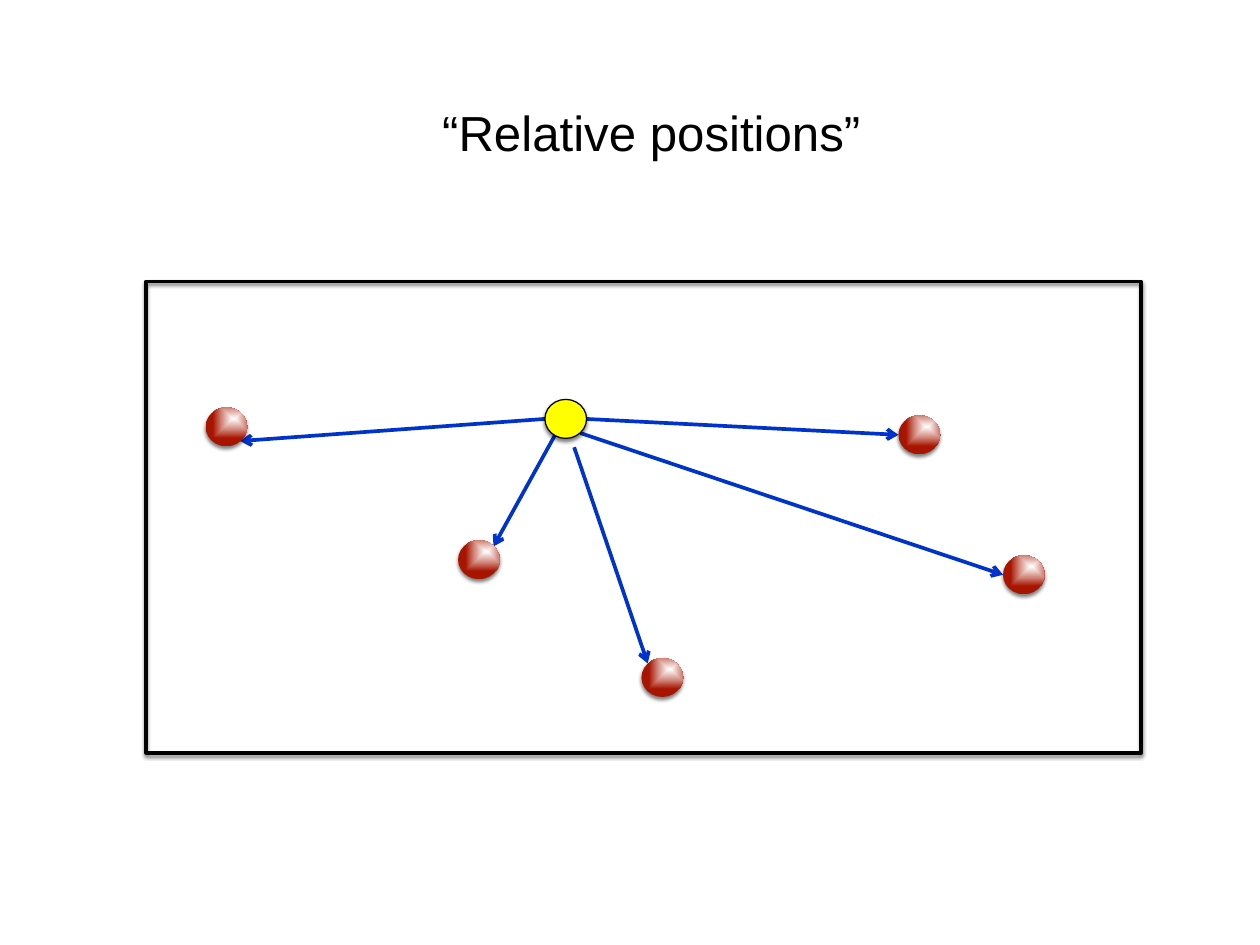
import pptx
import pptx.dml.color
import pptx.enum.shapes
import pptx.enum.text
import pptx.oxml
import pptx.oxml.ns
import pptx.util

RGB = pptx.dml.color.RGBColor
SHAPE = pptx.enum.shapes.MSO_SHAPE
BLACK = RGB(0x00, 0x00, 0x00)
BLUE = RGB(0x00, 0x33, 0xCC)
YELLOW = RGB(0xFF, 0xFF, 0x00)
STOPS = [
    (0, RGB(0xFF, 0xFF, 0xFF)),
    (54, RGB(0xD3, 0x8A, 0x80)),
    (100, RGB(0xA7, 0x15, 0x00)),
]

SCALE = 9144  # EMU in a px, 100 px to the inch
BALL = (47, 44)
HUB = (615, 451)
# left and top of each ball, then start and end of its arrow
BALLS = [
    ((232, 460), (615, 473), (271, 498)),
    ((1132, 627), (655, 489), (1132, 649)),
    ((1014, 469), (661, 473), (1014, 491)),
    ((517, 610), (626, 492), (557, 617)),
    ((724, 743), (648, 505), (731, 749)),
]


def emu(*px):
    return [pptx.util.Emu(n * SCALE) for n in px]


def node(xml):
    """Parse one element, given without its a: namespace declaration."""
    space = pptx.oxml.ns.nsdecls("a")
    tag, rest = xml[:-2].split(" ", 1) if xml.endswith("/>") else (None, None)
    if tag:
        return pptx.oxml.parse_xml(f"{tag} {space} {rest}/>")
    end = xml.index(">")
    return pptx.oxml.parse_xml(f"{xml[:end]} {space}{xml[end:]}")


def add_shade(shape):
    """Give the shape a soft shadow straight below it."""
    shape.shadow.inherit = False
    blur, dist = pptx.util.Pt(3), pptx.util.Pt(2)
    effects = shape._element.spPr.find(pptx.oxml.ns.qn("a:effectLst"))
    effects.append(node(
        f'<a:outerShdw blurRad="{blur}" dist="{dist}" dir="5400000" rotWithShape="0">'
        f'<a:srgbClr val="{BLACK}"><a:alpha val="50000"/></a:srgbClr></a:outerShdw>'))


def add_form(slide, kind, box, fill=None, width=0):
    shape = slide.shapes.add_shape(kind, *emu(*box))
    if fill is None:
        shape.fill.background()
    else:
        shape.fill.solid()
        shape.fill.fore_color.rgb = fill
    if width:
        shape.line.color.rgb = BLACK
        shape.line.width = pptx.util.Pt(width)
    else:
        shape.line.fill.background()
    add_shade(shape)
    return shape


def add_ball(slide, place):
    """Add a red ball lit from its upper right."""
    ball = add_form(slide, SHAPE.OVAL, place + BALL)
    stops = "".join(
        f'<a:gs pos="{pos * 1000}"><a:srgbClr val="{color}"/></a:gs>'
        for pos, color in STOPS)
    props = ball._element.spPr
    blank = props.find(pptx.oxml.ns.qn("a:noFill"))
    props.replace(blank, node(
        f'<a:gradFill rotWithShape="1"><a:gsLst>{stops}</a:gsLst><a:path path="shape">'
        '<a:fillToRect l="68000" t="29000" r="32000" b="71000"/>'
        '</a:path></a:gradFill>'))


def add_arrow(slide, start, end):
    kind = pptx.enum.shapes.MSO_CONNECTOR.STRAIGHT
    arrow = slide.shapes.add_connector(kind, *emu(*start, *end))
    arrow.line.color.rgb = BLUE
    arrow.line.width = pptx.util.Pt(3)
    arrow.line._get_or_add_ln().append(node('<a:tailEnd type="arrow"/>'))
    arrow._element.spPr.append(node("<a:effectLst></a:effectLst>"))


def add_title(slide, text, box):
    frame = slide.shapes.add_textbox(*emu(*box)).text_frame
    frame.margin_left, frame.margin_right = emu(14, 14)
    frame.margin_top, frame.margin_bottom = emu(7, 7)
    frame.word_wrap = False
    frame.auto_size = pptx.enum.text.MSO_AUTO_SIZE.SHAPE_TO_FIT_TEXT
    para = frame.paragraphs[0]
    para.alignment = pptx.enum.text.PP_ALIGN.CENTER
    run = para.add_run()
    run.text = text
    run.font.name = "Arial"
    run.font.size = pptx.util.Pt(40)
    run.font.color.rgb = BLACK


def main():
    deck = pptx.Presentation()
    deck.slide_width, deck.slide_height = emu(1422, 1067)
    slide = deck.slides.add_slide(deck.slide_layouts[6])
    add_title(slide, "“Relative positions”", (482, 109, 506, 82))
    for _, start, end in BALLS:
        add_arrow(slide, start, end)
    for place, _, _ in BALLS:
        add_ball(slide, place)
    add_form(slide, SHAPE.OVAL, HUB + BALL, YELLOW, 1)
    add_form(slide, SHAPE.RECTANGLE, (165, 318, 1123, 532), width=3)
    deck.save("out.pptx")


if __name__ == "__main__":
    main()
